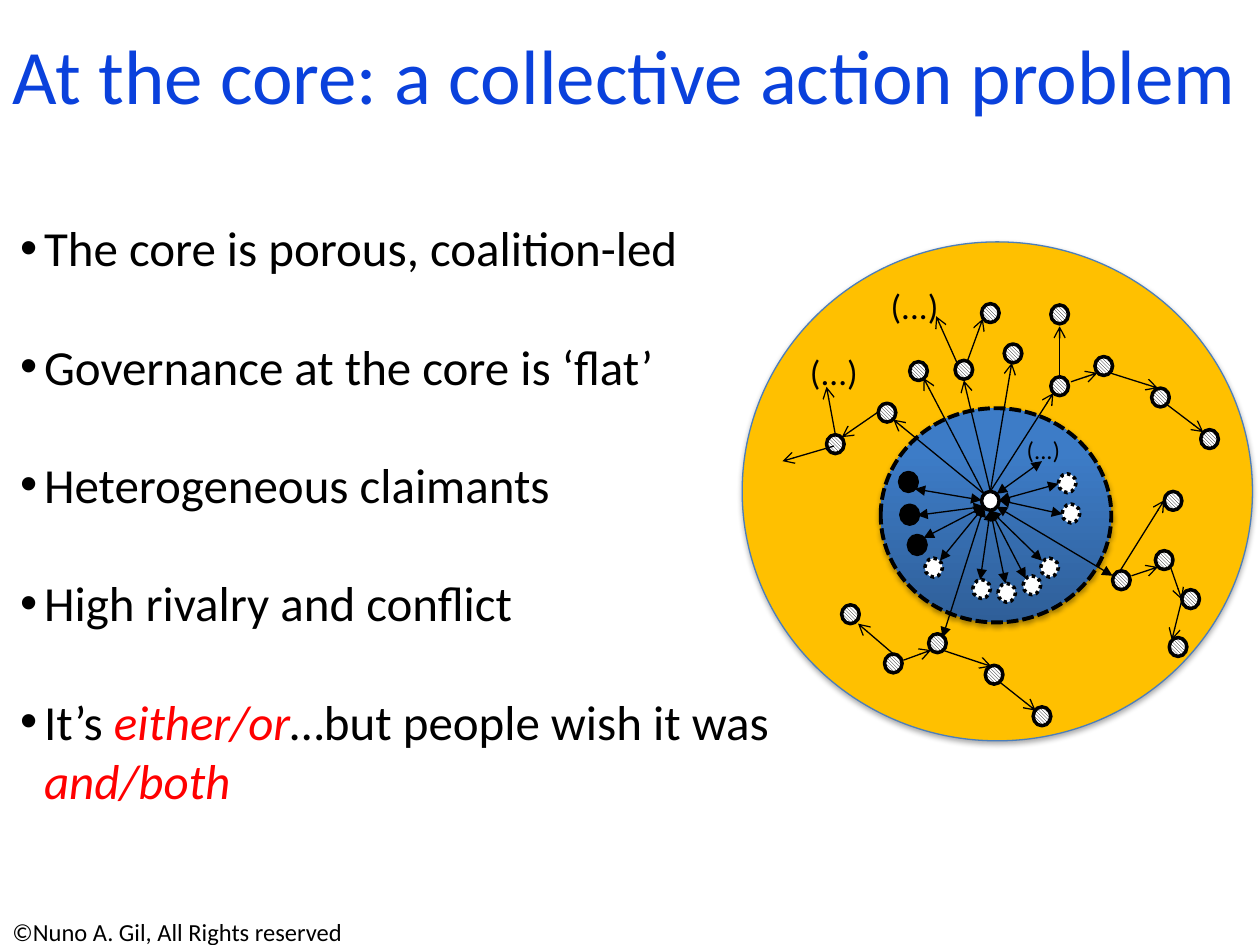
from dataclasses import dataclass

from lxml import etree
from pptx import Presentation
from pptx.dml.color import RGBColor
from pptx.enum.dml import MSO_LINE, MSO_PATTERN
from pptx.enum.shapes import MSO_CONNECTOR, MSO_SHAPE
from pptx.enum.text import MSO_ANCHOR, MSO_AUTO_SIZE, PP_ALIGN
from pptx.oxml.ns import qn
from pptx.util import Inches, Pt

OVAL = MSO_SHAPE.OVAL
STRAIGHT = MSO_CONNECTOR.STRAIGHT
DASHED, DOTTED = MSO_LINE.SQUARE_DOT, MSO_LINE.ROUND_DOT
HATCH = MSO_PATTERN.LIGHT_DOWNWARD_DIAGONAL
MIDDLE, CENTER, LEFT = MSO_ANCHOR.MIDDLE, PP_ALIGN.CENTER, PP_ALIGN.LEFT
FIT_SHAPE, NO_FIT = MSO_AUTO_SIZE.SHAPE_TO_FIT_TEXT, MSO_AUTO_SIZE.NONE


@dataclass(frozen=True)
class Theme:
    """Colours, font and type sizes of the slide."""
    font: str = "Calibri"
    title: RGBColor = RGBColor(0x0A, 0x41, 0xDC)
    ink: RGBColor = RGBColor(0, 0, 0)
    paper: RGBColor = RGBColor(0xFF, 0xFF, 0xFF)
    accent: RGBColor = RGBColor(0xFF, 0, 0)
    periphery: RGBColor = RGBColor(0xFF, 0xC0, 0)
    periphery_edge: RGBColor = RGBColor(0x4B, 0x7E, 0xBC)
    core_dark: RGBColor = RGBColor(0x2F, 0x5F, 0x99)
    core_light: RGBColor = RGBColor(0x3D, 0x7C, 0xC7)
    title_size: int = 44
    body_size: int = 28
    ellipsis_size: int = 20
    small_size: int = 14


THEME = Theme()
POINTS = [
    [("The core is porous, coalition-led", False)],
    [("Governance at the core is ‘flat’", False)],
    [("Heterogeneous claimants", False)],
    [("High rivalry and conflict", False)],
    [("It’s ", False), ("either/or", True),
     ("…but people wish it was ", False), ("and/both", True)],
]
HUB = (1.9, 1.98)
LEADERS = [(1.32, 2.33), (1.26, 2.09), (1.25, 1.83)]
CLAIMANTS = [(1.45, 2.51), (2.03, 2.71), (1.83, 2.68), (2.23, 2.65),
             (2.37, 2.51), (2.54, 2.08), (2.51, 1.84)]
OUTSIDERS = [(1.69, 0.94), (2.08, 0.81), (1.33, 0.95), (1.08, 1.28),
             (0.67, 1.53), (2.45, 1.07), (2.8, 0.91), (3.25, 1.16),
             (2.45, 0.5), (1.9, 0.49), (3.64, 1.49), (1.13, 3.27),
             (1.48, 3.11), (1.93, 3.36), (0.79, 2.88), (2.31, 3.69),
             (2.94, 2.61), (3.28, 2.45), (3.49, 2.76), (3.35, 1.98),
             (3.39, 3.14)]
TWO_WAY = {
    (1.92, 2.1): [(1.44, 2.35), (1.57, 2.53), (1.59, 3.14), (1.39, 2.17)],
    (2.02, 2.1): [(2.94, 2.65)],
    (1.97, 2.13): [(1.89, 2.68), (2.38, 2.53), (2.25, 2.67), (2.09, 2.71)],
    (1.9, 2.05): [(1.37, 1.96)],
    (2.04, 2.05): [(2.54, 2.16), (2.51, 1.92)],
    (2.02, 2): [(2.38, 1.74)],
}
ONE_WAY = {
    (1.97, 1.98): [(2.14, 0.96), (2.47, 1.2), (1.76, 1.1)],
    (1.92, 2): [(1.44, 1.08), (1.2, 1.41)],
    (1.08, 1.35): [(0.79, 1.55)],
    (2.61, 1.11): [(2.82, 1.04)],
    (2.92, 1.04): [(3.3, 1.16)],
    (2.52, 1.07): [(2.52, 0.67)],
    (0.73, 1.62): [(0.32, 1.74)],
    (0.74, 1.53): [(0.67, 1.15)],
    (1.71, 0.97): [(1.54, 0.59)],
    (1.79, 0.94): [(1.91, 0.61)],
    (3.37, 1.29): [(3.66, 1.51)],
    (1.28, 3.32): [(1.5, 3.24)],
    (1.59, 3.24): [(1.98, 3.37)],
    (1.2, 3.27): [(0.92, 3.03)],
    (2.04, 3.49): [(2.33, 3.72)],
    (3.09, 2.65): [(3.3, 2.58)],
    (3.4, 2.58): [(3.49, 2.84)],
    (3, 2.61): [(3.35, 2.05)],
    (3.49, 2.84): [(3.41, 3.16)],
}
ELLIPSES = [(0.44, 0.81, 0.41, THEME.ellipsis_size),
            (1.08, 0.29, 0.41, THEME.ellipsis_size),
            (2.16, 1.48, 0.31, THEME.small_size)]


def apply(target, **values):
    """Set each given format value on the target."""
    for key, value in values.items():
        setattr(target, key, value)


def place(shape, box):
    """Move a shape to a box of left, top, width and height in inches."""
    apply(shape, **dict(zip(("left", "top", "width", "height"), map(Inches, box))))


def write(paragraph, text, size, color=THEME.ink, italic=False):
    """Add one formatted run to a paragraph."""
    run = paragraph.add_run()
    run.text = text
    apply(run.font, name=THEME.font, size=Pt(size), italic=italic)
    run.font.color.rgb = color


def add_oval(shapes, box, color, edge, weight, dash=None):
    """Add an outlined oval without a shadow."""
    oval = shapes.add_shape(OVAL, *map(Inches, box))
    oval.shadow.inherit = False
    oval.fill.solid()
    oval.fill.fore_color.rgb = color
    oval.line.color.rgb = edge
    apply(oval.line, width=Pt(weight), dash_style=dash)
    return oval


def add_soft_shadow(oval):
    """Give an oval a soft shadow below it."""
    effects = oval.element.spPr.find(qn("a:effectLst"))
    shadow = etree.SubElement(effects, qn("a:outerShdw"), blurRad=str(Pt(3.1)),
                              dist=str(Pt(1.8)), dir="5400000", rotWithShape="0")
    black = etree.SubElement(shadow, qn("a:srgbClr"), val=str(THEME.ink))
    etree.SubElement(black, qn("a:alpha"), val="35000")


def add_arrow(shapes, start, end, heads):
    """Add a thin line with the given heads, a dict of end tag to type."""
    arrow = shapes.add_connector(STRAIGHT, *map(Inches, (*start, *end)))
    arrow.line.color.rgb = THEME.ink
    arrow.line.width = Pt(0.75)
    for tag, kind in heads.items():
        etree.SubElement(arrow.line._get_or_add_ln(), qn(tag), type=kind)
    etree.SubElement(arrow._element.spPr, qn("a:effectLst"))


def add_label(shapes, box, text, size, wrap):
    """Add a one-line text box."""
    label = shapes.add_textbox(*map(Inches, box))
    apply(label.text_frame, word_wrap=wrap, auto_size=FIT_SHAPE)
    write(label.text_frame.paragraphs[0], text, size)


def add_title(slide, box):
    """Fill the title placeholder."""
    title = slide.shapes.title
    place(title, box)
    apply(title.text_frame, vertical_anchor=MIDDLE, auto_size=NO_FIT, word_wrap=True)
    heading = title.text_frame.paragraphs[0]
    heading.alignment = CENTER
    write(heading, "At the core: a collective action problem",
          THEME.title_size, THEME.title)


def add_points(slide, box):
    """Fill the body placeholder with the bulleted points."""
    body = slide.placeholders[1]
    place(body, box)
    frame = body.text_frame
    apply(frame, vertical_anchor=MIDDLE, auto_size=NO_FIT, word_wrap=True,
          margin_bottom=Inches(1))
    for index, point in enumerate(POINTS):
        paragraph = frame.add_paragraph() if index else frame.paragraphs[0]
        apply(paragraph, alignment=LEFT, space_before=Pt(34 if index else 0))
        indent = paragraph._p.get_or_add_pPr()
        indent.set("marL", str(Inches(0.19)))
        indent.set("indent", str(Inches(-0.19)))
        for text, stressed in point:
            write(paragraph, text, THEME.body_size,
                  THEME.accent if stressed else THEME.ink, stressed)


def add_network(slide, box):
    """Draw the core, its periphery and the links between claimants."""
    left, top, width, height = box
    shapes = slide.shapes.add_group_shape().shapes

    def at(point):
        return left + point[0], top + point[1]

    periphery = add_oval(shapes, (left, top, width, height), THEME.periphery,
                         THEME.periphery_edge, 0.75)
    core = add_oval(shapes, (*at((1.1, 1.32)), 1.83, 1.7), THEME.core_light,
                    THEME.ink, 2.25, DASHED)
    core.fill.gradient()
    core.fill.gradient_angle = 90
    dark, light = core.fill.gradient_stops
    dark.color.rgb, light.color.rgb = THEME.core_dark, THEME.core_light
    dark.position, light.position = 0, 0.8
    for disc in (periphery, core):
        add_soft_shadow(disc)

    for nodes, color, dash, hatched in (([HUB], THEME.paper, None, False),
                                        (LEADERS, THEME.ink, None, False),
                                        (CLAIMANTS, THEME.paper, DOTTED, False),
                                        (OUTSIDERS, THEME.paper, None, True)):
        for node in nodes:
            oval = add_oval(shapes, (*at(node), 0.14, 0.15), color, THEME.ink, 2, dash)
            if hatched:
                oval.fill.patterned()
                oval.fill.pattern = HATCH
                oval.fill.fore_color.rgb = THEME.ink
                oval.fill.back_color.rgb = THEME.paper

    for links, heads in ((TWO_WAY, {"a:headEnd": "triangle", "a:tailEnd": "triangle"}),
                         (ONE_WAY, {"a:tailEnd": "arrow"})):
        for start, ends in links.items():
            for end in ends:
                add_arrow(shapes, at(start), at(end), heads)

    for x, y, tall, size in ELLIPSES:
        add_label(shapes, (*at((x, y)), 0.68, tall), "(...)", size, True)


def main():
    """Build and save the slide."""
    deck = Presentation()
    deck.slide_width, deck.slide_height = Inches(10), Inches(7.5)
    slide = deck.slides.add_slide(deck.slide_layouts[1])
    add_network(slide, (5.89, 1.92, 4.05, 3.96))
    add_title(slide, (-0.04, 0.39, 10, 0.39))
    add_label(slide.shapes, (0, 7.23, 3.11, 0.33),
              "©Nuno A. Gil, All Rights reserved", THEME.small_size, False)
    add_points(slide, (0.06, 2.07, 6.46, 4.96))
    deck.save("out.pptx")


if __name__ == "__main__":
    main()
